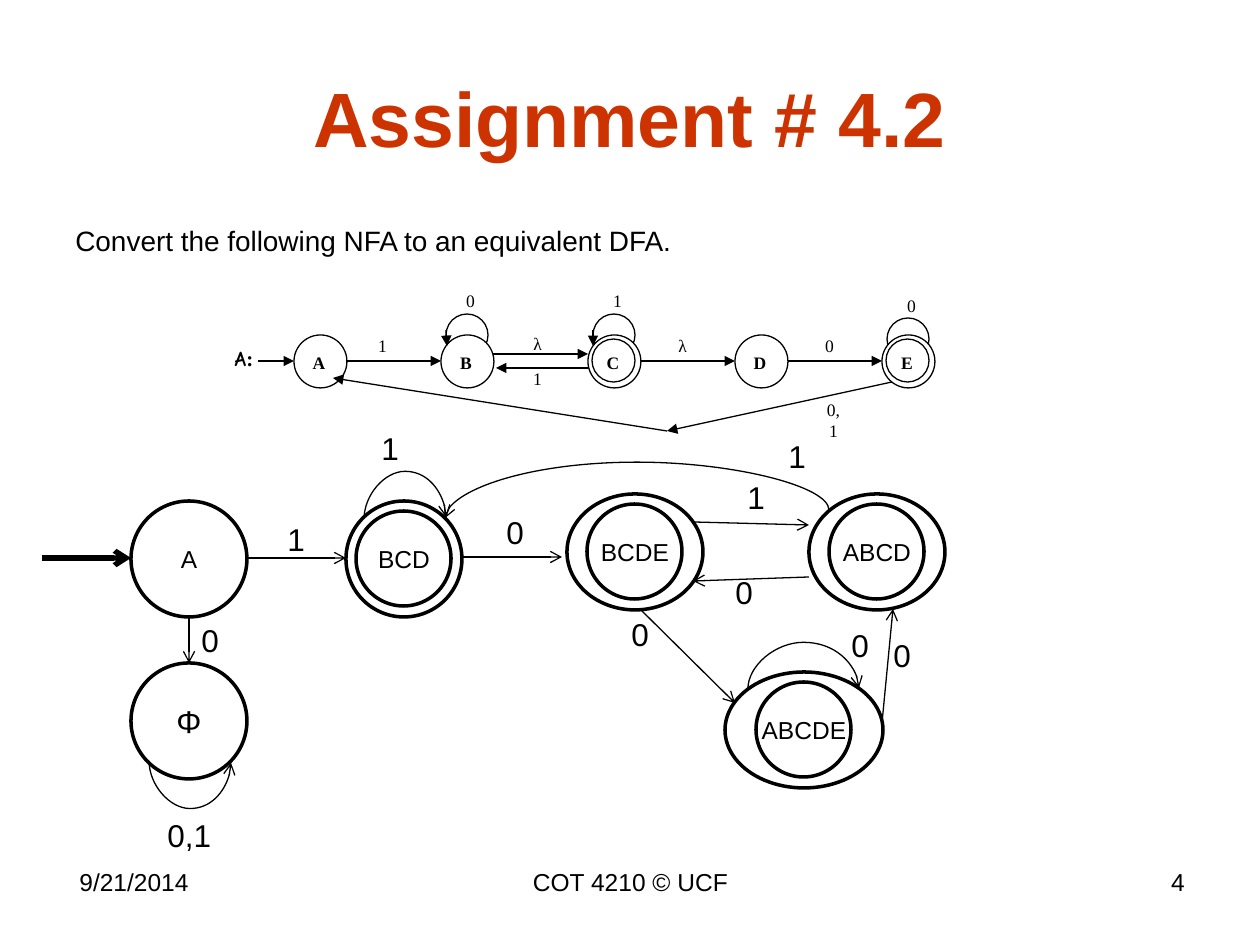
"""Build the slide that turns an NFA into an equivalent DFA."""
from typing import NamedTuple

import lxml.etree
import pptx
import pptx.dml.color
import pptx.enum.shapes
import pptx.enum.text
import pptx.oxml.ns
import pptx.util

SCALE = 914400 / 126
BLACK = "000000"
ALIGN = pptx.enum.text.PP_ALIGN
MID = pptx.enum.text.MSO_ANCHOR.MIDDLE
KIND = pptx.enum.shapes.MSO_CONNECTOR
OVAL = pptx.enum.shapes.MSO_SHAPE.OVAL
SANS = {"name": "Arial", "size": pptx.util.Pt(14), "bold": False}
BIG = {**SANS, "size": pptx.util.Pt(18)}
SERIF = {**SANS, "name": "Times New Roman", "size": pptx.util.Pt(10)}
BOLD = {**SERIF, "bold": True}
MARK = {**BOLD, "size": pptx.util.Pt(12)}
HEAD = {**SANS, "size": pptx.util.Pt(44), "bold": True}
BODY = {**SANS, "size": pptx.util.Pt(16)}


class Ring(NamedTuple):
    x: int
    y: int
    wide: int
    high: int
    text: str = ""
    form: dict = SANS
    line: float = 2
    fill: bool = True


class Label(NamedTuple):
    x: int
    y: int
    wide: int
    high: int
    text: str
    form: dict = BIG
    side: ALIGN = ALIGN.LEFT
    inset: bool = True
    wrap: bool = True
    color: str = BLACK


class Arrow(NamedTuple):
    x: int
    y: int
    to_x: int
    to_y: int
    head: str = "arrow"
    line: float = 0.75


class Arc(NamedTuple):
    x: int
    y: int
    to_x: int
    to_y: int
    bend: int


def px(size: float) -> int:
    """Turn px into EMU."""
    return round(size * SCALE)


def tint(code: str) -> pptx.dml.color.RGBColor:
    """Read a hex colour."""
    return pptx.dml.color.RGBColor.from_string(code)


def write(para, text: str, form: dict, color: str = BLACK) -> None:
    """Add a run in the given format."""
    run = para.add_run()
    run.text = text
    for key, value in form.items():
        setattr(run.font, key, value)
    run.font.color.rgb = tint(color)


def draw_ring(shapes, ring: Ring) -> None:
    """Draw one state circle or loop."""
    shape = shapes.add_shape(OVAL, *map(px, ring[:4]))
    shape.shadow.inherit = False
    if ring.fill:
        shape.fill.solid()
        shape.fill.fore_color.rgb = tint("FFFFFF")
    else:
        shape.fill.background()
    shape.line.color.rgb = tint(BLACK)
    shape.line.width = pptx.util.Pt(ring.line)
    if ring.text:
        frame = shape.text_frame
        frame.word_wrap, frame.vertical_anchor = False, MID
        frame.paragraphs[0].alignment = ALIGN.CENTER
        write(frame.paragraphs[0], ring.text, ring.form)


def draw_label(shapes, label: Label):
    """Draw one text box and return its frame."""
    frame = shapes.add_textbox(*map(px, label[:4])).text_frame
    frame.word_wrap = label.wrap
    if not label.inset:
        for edge in ("left", "top", "right", "bottom"):
            setattr(frame, f"margin_{edge}", 0)
    frame.paragraphs[0].alignment = label.side
    write(frame.paragraphs[0], label.text, label.form, label.color)
    return frame


def style(link, width: float, head: str) -> None:
    """Give a connector its line and arrowhead."""
    link.line.color.rgb = tint(BLACK)
    link.line.width = pptx.util.Pt(width)
    qn = pptx.oxml.ns.qn
    tail = lxml.etree.SubElement(link.line._get_or_add_ln(), qn("a:tailEnd"))
    tail.set("type", head)
    lxml.etree.SubElement(link._element.spPr, qn("a:effectLst"))


def draw_arrow(shapes, arrow: Arrow) -> None:
    """Draw one straight arrow."""
    link = shapes.add_connector(KIND.STRAIGHT, *map(px, arrow[:4]))
    style(link, arrow.line, arrow.head)


def draw_arc(shapes, arc: Arc) -> None:
    """Draw a curved arrow that bends up or down by a turned connector."""
    run, drop = arc.to_x - arc.x, arc.to_y - arc.y
    wide, high = abs(drop), abs(run)
    left = (arc.x + arc.to_x - wide) / 2
    top = (arc.y + arc.to_y - high) / 2
    link = shapes.add_connector(KIND.CURVE, px(left), px(top), px(left + wide), px(top + high))
    frame = link._element.spPr.get_or_add_xfrm()
    turn = 90 if drop < 0 else 270
    flip = (run > 0) == (drop < 0)
    for key, value in {"rot": turn * 60000, "flipH": 1, "flipV": int(flip)}.items():
        frame.set(key, str(value))
    qn = pptx.oxml.ns.qn
    geom = link._element.spPr.find(qn("a:prstGeom"))
    guide = lxml.etree.SubElement(geom.find(qn("a:avLst")), qn("a:gd"))
    guide.set("name", "adj1")
    guide.set("fmla", f"val {round(arc.bend / drop * 100000)}")
    style(link, 0.75, "arrow")


def draw_nfa(shapes) -> None:
    """Draw the small automaton with its states in a row."""
    for x, y in ((446, 314), (593, 314), (887, 318)):
        draw_ring(shapes, Ring(x, y, 42, 42, line=0.75))
    for i, name in enumerate("ABCDE"):
        x = 294 + 147 * i
        draw_ring(shapes, Ring(x, 335, 53, 53, line=0.75))
        if name in "CE":
            draw_ring(shapes, Ring(x + 4, 339, 43, 43, line=0.75))
        draw_label(shapes, Label(x + 5, 346, 40, 34, name, BOLD, ALIGN.CENTER))
    for ends in ((258, 361, 294, 361), (346, 361, 441, 361), (493, 354, 588, 354),
                 (641, 361, 735, 361), (788, 361, 882, 361), (588, 368, 496, 368),
                 (892, 382, 667, 431), (667, 431, 333, 378),
                 (593, 330, 593, 346), (446, 330, 447, 346)):
        draw_arrow(shapes, Arrow(*ends, "triangle"))
    for x, y, text in ((901, 295, "0"), (372, 335, "1"), (527, 333, "λ"), (607, 290, "1"),
                       (672, 335, "λ"), (823, 399, "0,1"), (819, 335, "0"),
                       (460, 290, "0"), (527, 368, "1")):
        draw_label(shapes, Label(x, y, 21, 25, text, SERIF, ALIGN.CENTER, False, False))
    frame = draw_label(shapes, Label(220, 339, 48, 34, "A", {**MARK, "name": "Comic Neue"}, ALIGN.CENTER))
    write(frame.paragraphs[0], ":", MARK)


def draw_dfa(shapes) -> None:
    """Draw the large automaton built from sets of states."""
    for x, y, wide, text in ((131, 501, 116, "A"), (346, 501, 116, "BCD"),
                             (131, 663, 116, "Φ"), (567, 494, 136, "BCDE"),
                             (809, 494, 136, "ABCD"), (725, 672, 158, "ABCDE")):
        draw_ring(shapes, Ring(x, y, wide, 116, text, BIG if text == "Φ" else SANS))
        if "B" in text:
            draw_ring(shapes, Ring(x + (wide - 95) // 2, y + 10, 95, 95, fill=False))
    for arrow in (Arrow(42, 558, 131, 558, line=3), Arrow(247, 558, 346, 558),
                  Arrow(189, 616, 189, 663), Arrow(462, 557, 562, 557),
                  Arrow(693, 522, 809, 525), Arrow(809, 577, 693, 581),
                  Arrow(640, 609, 735, 703), Arrow(882, 723, 893, 609)):
        draw_arrow(shapes, arrow)
    for arc in (Arc(364, 519, 446, 517, -48), Arc(149, 761, 231, 763, 48),
                Arc(829, 510, 445, 518, -48), Arc(748, 689, 859, 688, -47)):
        draw_arc(shapes, arc)
    for x, y, text in ((369, 423, "1"), (275, 514, "1"), (189, 615, "0"), (494, 507, "0"),
                       (735, 472, "1"), (723, 567, "0"), (776, 431, "1"), (839, 620, "0"),
                       (619, 609, "0"), (881, 630, "0"), (155, 810, "0,1")):
        draw_label(shapes, Label(x, y, 69 if "," in text else 43, 50, text, wrap=False))


def main() -> None:
    """Build and save the slide."""
    deck = pptx.Presentation()
    deck.slide_width, deck.slide_height = px(1260), px(945)
    shapes = deck.slides.add_slide(deck.slide_layouts[6]).shapes
    title = Label(63, 38, 1134, 158, "Assignment # 4.2", HEAD, ALIGN.CENTER, color="CC3300")
    draw_label(shapes, title).vertical_anchor = MID
    task = Label(63, 221, 1134, 42, "Convert the following NFA to an equivalent DFA.", BODY)
    draw_label(shapes, task).paragraphs[0].line_spacing = 0.9
    for x, wide, text, side in ((67, 294, "9/21/2014", ALIGN.LEFT),
                                (431, 399, "COT 4210 © UCF", ALIGN.CENTER),
                                (903, 294, "4", ALIGN.RIGHT)):
        draw_label(shapes, Label(x, 861, wide, 66, text, SANS, side))
    draw_nfa(shapes)
    draw_dfa(shapes)
    deck.save("out.pptx")


if __name__ == "__main__":
    main()
